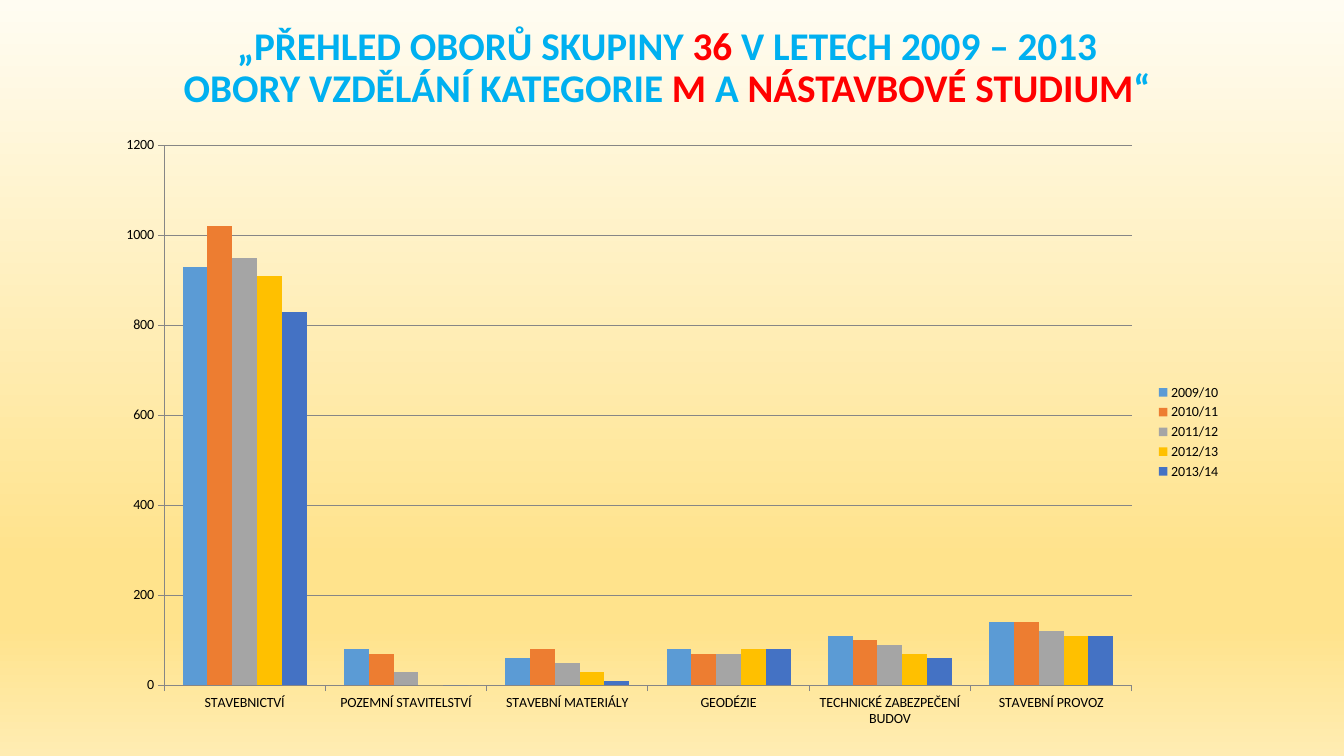
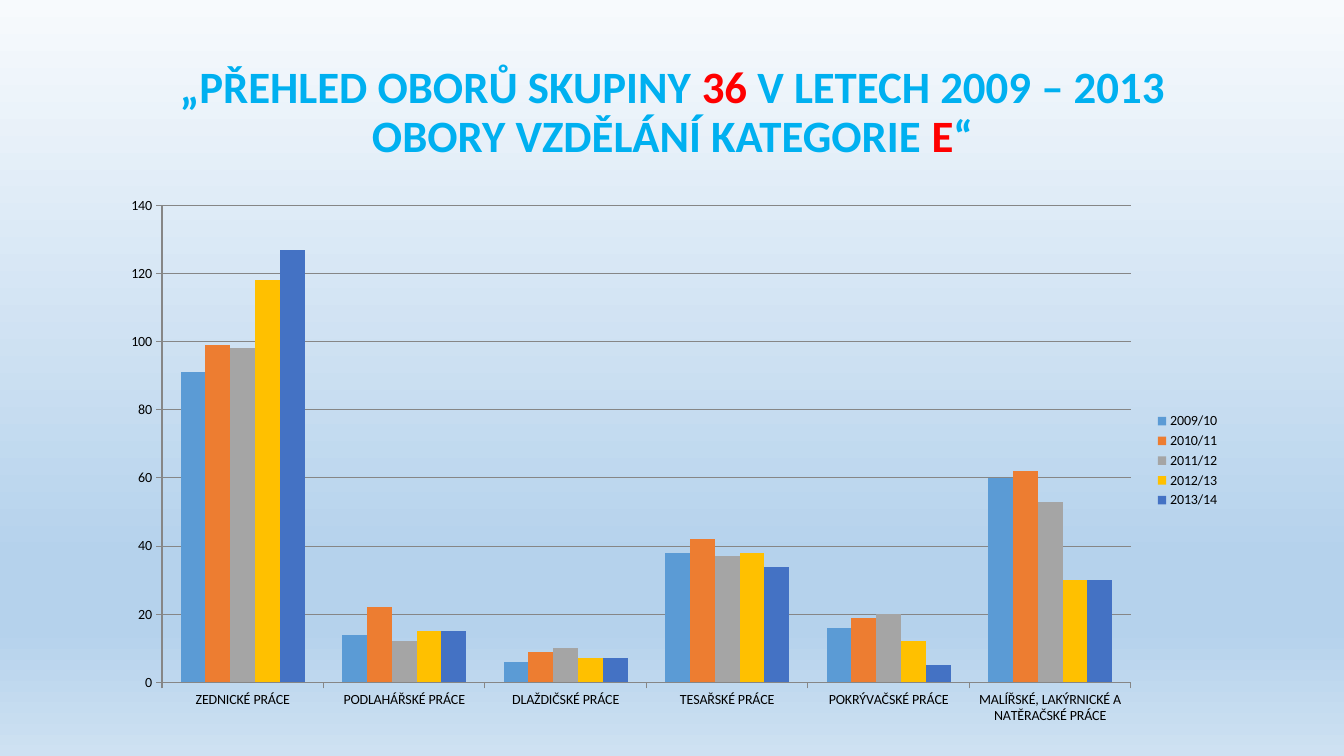
from pptx import Presentation
from pptx import util as u
from pptx.chart.data import CategoryChartData
from pptx.dml.color import RGBColor
from pptx.enum import chart as ch, text
from pptx.oxml import parse_xml
from pptx.oxml.ns import nsdecls, qn

WIDE, HIGH = u.Inches(13.33), u.Inches(7.5)
FONT = "Calibri"
BLUE, RED, BLACK, GREY = "00B0F0", "FF0000", "000000", "868686"
YEARS = {
    "2009/10": "5B9BD5",
    "2010/11": "ED7D31",
    "2011/12": "A5A5A5",
    "2012/13": "FFC000",
    "2013/14": "4472C4",
}
STOPS = (0, 74, 83, 100)

SLIDES = [
    dict(
        shades=("FFFCF2", "FFE38C", "FFE38C", "FFECB2"),
        head=(8.78, 1.47, 81.7, 15.2),
        size=28,
        parts=["M", " A ", "NÁSTAVBOVÉ STUDIUM", "“"],
        plot=(7.73, 16.53, 83.87, 81.2),
        rows={
            "STAVEBNICTVÍ": (930, 1020, 950, 910, 830),
            "POZEMNÍ STAVITELSTVÍ": (80, 70, 30, 0, 0),
            "STAVEBNÍ MATERIÁLY": (60, 80, 50, 30, 10),
            "GEODÉZIE": (80, 70, 70, 80, 80),
            "TECHNICKÉ ZABEZPEČENÍ BUDOV": (110, 100, 90, 70, 60),
            "STAVEBNÍ PROVOZ": (140, 140, 120, 110, 110),
        },
        top=1200,
        step=200,
    ),
    dict(
        shades=("F7FAFD", "B5D2EC", "B5D2EC", "CEE1F2"),
        head=(6.9, 5.33, 86.27, 19.33),
        size=32,
        parts=["E", "“"],
        plot=(8.1, 24.67, 83.42, 72.53),
        rows={
            "ZEDNICKÉ PRÁCE": (91, 99, 98, 118, 127),
            "PODLAHÁŘSKÉ PRÁCE": (14, 22, 12, 15, 15),
            "DLAŽDIČSKÉ PRÁCE": (6, 9, 10, 7, 7),
            "TESAŘSKÉ PRÁCE": (38, 42, 37, 38, 34),
            "POKRÝVAČSKÉ PRÁCE": (16, 19, 20, 12, 5),
            "MALÍŘSKÉ, LAKÝRNICKÉ A NATĚRAČSKÉ PRÁCE": (60, 62, 53, 30, 30),
        },
        top=140,
        step=20,
    ),
]


def tint(code):
    return RGBColor.from_string(code)


def place(box):
    left, top, wide, high = box
    return (int(WIDE * left / 100), int(HIGH * top / 100),
            int(WIDE * wide / 100), int(HIGH * high / 100))


def style(font, size, color, bold=False):
    font.name, font.size, font.bold = FONT, u.Pt(size), bold
    font.color.rgb = tint(color)


def write(para, words, **form):
    run = para.add_run()
    run.text = words
    style(run.font, **form)


def wash(slide, shades):
    fill = slide.background.fill
    fill.gradient()
    fill.gradient_angle = 270
    stops = slide.element.find(".//" + qn("a:gsLst"))
    for stop in list(stops):
        stops.remove(stop)
    for spot, shade in zip(STOPS, shades):
        stops.append(parse_xml(
            f'<a:gs {nsdecls("a")} pos="{spot * 1000}">'
            f'<a:srgbClr val="{shade}"/></a:gs>'))


def title(slide, box, size, parts):
    head = slide.shapes.title
    head.left, head.top, head.width, head.height = place(box)
    frame = head.text_frame
    frame.word_wrap = True
    frame.auto_size = text.MSO_AUTO_SIZE.NONE
    frame.vertical_anchor = text.MSO_ANCHOR.MIDDLE
    para = frame.paragraphs[0]
    para.alignment = text.PP_ALIGN.CENTER
    para.line_spacing = 0.9
    form = dict(size=size, bold=True)
    write(para, "„PŘEHLED OBORŮ SKUPINY ", color=BLUE, **form)
    write(para, "36", color=RED, **form)
    write(para, " V LETECH 2009 – 2013", color=BLUE, **form)
    para.add_line_break()
    write(para, "OBORY VZDĚLÁNÍ KATEGORIE ", color=BLUE, **form)
    for turn, words in enumerate(parts):
        write(para, words, color=BLUE if turn % 2 else RED, **form)


def rule(line):
    line.color.rgb = tint(GREY)
    line.width = u.Pt(0.75)


def bars(slide, box, rows, top, step):
    data = CategoryChartData()
    data.categories = list(rows)
    for year, vals in zip(YEARS, zip(*rows.values())):
        data.add_series(year, vals)
    chart = slide.shapes.add_chart(
        ch.XL_CHART_TYPE.COLUMN_CLUSTERED, *place(box), data).chart
    style(chart.font, 10, BLACK)
    chart.has_title = False
    chart.has_legend = True
    chart.legend.position = ch.XL_LEGEND_POSITION.RIGHT
    chart.legend.include_in_layout = False
    plot = chart.plots[0]
    plot.gap_width, plot.overlap = 150, 0
    plot.vary_by_categories = False
    for series, color in zip(plot.series, YEARS.values()):
        series.format.fill.solid()
        series.format.fill.fore_color.rgb = tint(color)
    for axis in (chart.category_axis, chart.value_axis):
        axis.major_tick_mark = ch.XL_TICK_MARK.OUTSIDE
        axis.minor_tick_mark = ch.XL_TICK_MARK.NONE
        rule(axis.format.line)
    axis = chart.value_axis
    axis.minimum_scale, axis.maximum_scale, axis.major_unit = 0, top, step
    axis.has_major_gridlines = True
    rule(axis.major_gridlines.format.line)


def main():
    deck = Presentation()
    deck.slide_width, deck.slide_height = WIDE, HIGH
    for page in SLIDES:
        slide = deck.slides.add_slide(deck.slide_layouts[5])
        wash(slide, page["shades"])
        title(slide, page["head"], page["size"], page["parts"])
        bars(slide, page["plot"], page["rows"], page["top"], page["step"])
    deck.save("out.pptx")


if __name__ == "__main__":
    main()
